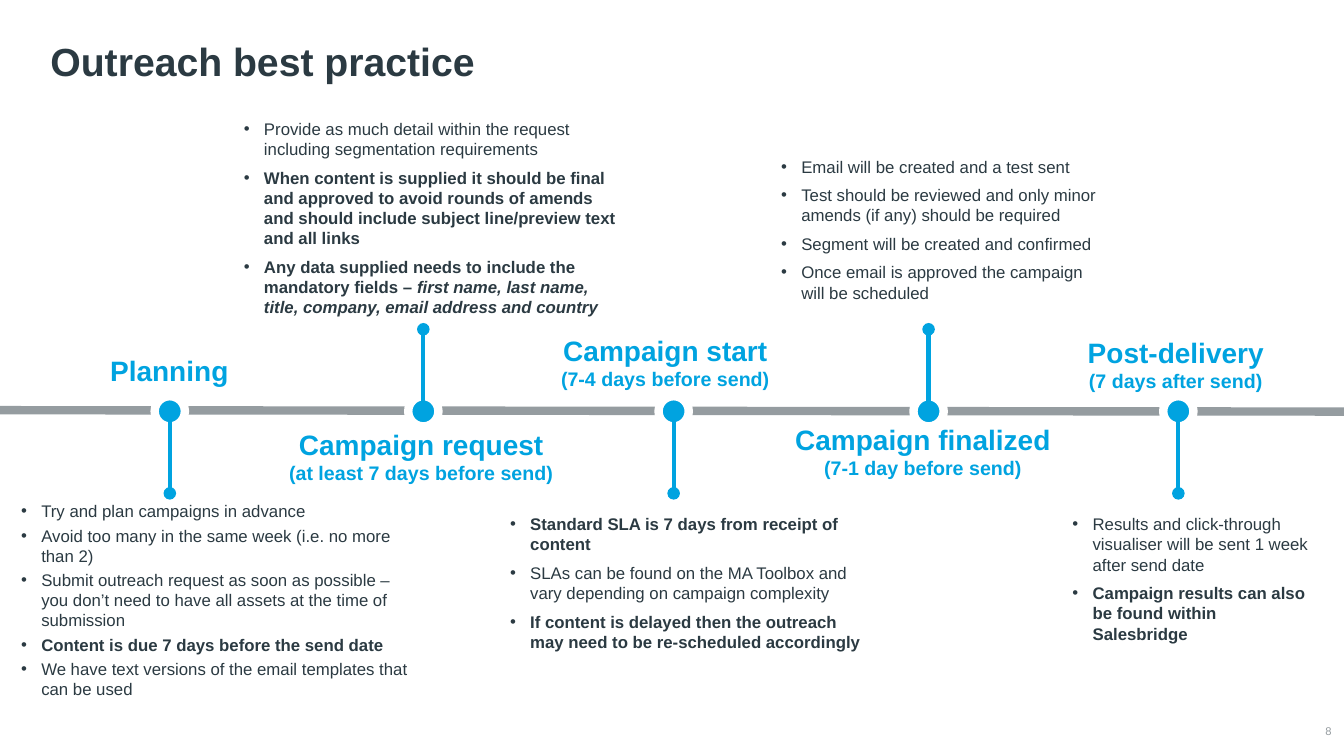
from dataclasses import dataclass

from lxml.etree import SubElement
from pptx import Presentation
from pptx.dml.color import RGBColor
from pptx.enum.shapes import MSO_CONNECTOR, MSO_SHAPE
from pptx.enum.text import MSO_ANCHOR, MSO_AUTO_SIZE, PP_ALIGN
from pptx.oxml.ns import qn
from pptx.util import Pt

COLOURS = {"ink": "2B3A42", "blue": "00A3E0", "grey": "959CA0", "white": "FFFFFF"}
FONT = "Arial"
AXIS_Y = 293.8
STEM = 58.6
DOT = 21.6
INDENT = 14.4


@dataclass
class Stage:
    """One stop on the timeline; boxes are left, top, width, height in points."""
    x: float
    direction: int  # -1: details above the axis, 1: below
    heading: tuple
    heading_box: tuple
    details: list  # paragraphs, each a list of (text, style) runs
    details_box: tuple
    gap: float = 6


STAGES = [
    Stage(121.3, 1, ("Planning",), (54.7, 249.1, 132.5, 31.7), [
        [("Try and plan campaigns in advance", "")],
        [("Avoid too many in the same week (i.e. no more than 2)", "")],
        [("Submit outreach request as soon as possible – you don’t need to have "
          "all assets at the time of submission", "")],
        [("Content is due 7 days before the send date", "b")],
        [("We have text versions of the email templates that can be used", "")],
    ], (15.1, 357.8, 276.5, 103), gap=3),
    Stage(302.4, -1, ("Campaign request", "(at least 7 days before send)"),
          (195.8, 301.7, 210.2, 48.2), [
        [("Provide as much detail within the request including segmentation "
          "requirements", "")],
        [("When content is supplied it should be final and approved to avoid "
          "rounds of amends and should include subject line/preview text and "
          "all links", "b")],
        [("Any data supplied needs to include the mandatory fields – ", "b"),
         ("first name, last name, title, company, email address and country", "bi")],
    ], (174.2, 85, 271.4, 139.7)),
    Stage(481.2, 1, ("Campaign start", "(7-4 days before send)"),
          (380.2, 234.7, 190.1, 48.2), [
        [("Standard SLA is 7 days from receipt of content", "b")],
        [("SLAs can be found on the MA Toolbox and vary depending on campaign "
          "complexity", "")],
        [("If content is delayed then the outreach may need to be re-scheduled "
          "accordingly", "b")],
    ], (364.3, 367.2, 260.6, 93.6)),
    Stage(663.3, -1, ("Campaign finalized", "(7-1 day before send)"),
          (556, 298.1, 206.6, 48.2), [
        [("Email will be created and a test sent", "")],
        [("Test should be reviewed and only minor amends (if any) should be "
          "required", "")],
        [("Segment will be created and confirmed", "")],
        [("Once email is approved the campaign will be scheduled", "")],
    ], (558, 111.6, 228.2, 115.9)),
    Stage(841.7, 1, ("Post-delivery", "(7 days after send)"),
          (756.7, 236.2, 166.3, 48.2), [
        [("Results and click-through visualiser will be sent 1 week after send "
          "date", "")],
        [("Campaign results can also be found within Salesbridge", "b")],
    ], (766.1, 367.2, 172.8, 93.6)),
]


def colour(name):
    return RGBColor.from_string(COLOURS[name])


def add_run(paragraph, text, size, ink, style=""):
    run = paragraph.add_run()
    run.text = text
    run.font.name = FONT
    run.font.size = Pt(size)
    run.font.color.rgb = colour(ink)
    run.font.bold = "b" in style
    run.font.italic = "i" in style


def add_frame(slide, box, inset=True):
    frame = slide.shapes.add_textbox(*map(Pt, box)).text_frame
    frame.word_wrap = True
    if not inset:
        frame.margin_left = frame.margin_right = Pt(0)
        frame.margin_top = frame.margin_bottom = Pt(0)
    return frame


def add_paragraph(frame, index):
    return frame.add_paragraph() if index else frame.paragraphs[0]


def add_line(slide, start, end, ink, width, round_head=False):
    line = slide.shapes.add_connector(
        MSO_CONNECTOR.STRAIGHT, *map(Pt, (*start, *end)))
    line.line.color.rgb = colour(ink)
    line.line.width = Pt(width)
    if round_head:
        SubElement(line.line._get_or_add_ln(), qn("a:headEnd"), type="oval")
    SubElement(line._element.spPr, qn("a:effectLst"))


def add_title(slide, text):
    title = slide.shapes.title
    title.left, title.top, title.width, title.height = map(
        Pt, (28.8, 20.9, 892.8, 43.2))
    frame = title.text_frame
    frame.auto_size = MSO_AUTO_SIZE.NONE
    frame.vertical_anchor = MSO_ANCHOR.BOTTOM
    paragraph = frame.paragraphs[0]
    paragraph.alignment = PP_ALIGN.LEFT
    paragraph.line_spacing = 0.9
    add_run(paragraph, text, 28, "ink", "b")


def add_page_number(slide, number):
    frame = add_frame(slide, (923, 515.5, 28.1, 13.7), inset=False)
    frame.vertical_anchor = MSO_ANCHOR.MIDDLE
    frame.paragraphs[0].alignment = PP_ALIGN.RIGHT
    add_run(frame.paragraphs[0], number, 8, "grey")


def add_heading(slide, stage):
    frame = add_frame(slide, stage.heading_box)
    frame.auto_size = MSO_AUTO_SIZE.SHAPE_TO_FIT_TEXT
    for index, (text, size) in enumerate(zip(stage.heading, (20, 14))):
        paragraph = add_paragraph(frame, index)
        paragraph.alignment = PP_ALIGN.CENTER
        add_run(paragraph, text, size, "blue", "b")


def add_details(slide, stage):
    frame = add_frame(slide, stage.details_box, inset=False)
    for index, runs in enumerate(stage.details):
        paragraph = add_paragraph(frame, index)
        properties = paragraph._p.get_or_add_pPr()
        properties.set("marL", str(Pt(INDENT)))
        properties.set("indent", str(-Pt(INDENT)))
        SubElement(properties, qn("a:buFont"), typeface=FONT)
        SubElement(properties, qn("a:buChar"), char="•")
        paragraph.space_after = Pt(stage.gap)
        for text, style in runs:
            add_run(paragraph, text, 12, "ink", style)


def add_marker(slide, stage):
    """Draw the ringed dot on the axis and the stem towards the details."""
    dot = slide.shapes.add_shape(
        MSO_SHAPE.OVAL, Pt(stage.x - DOT / 2), Pt(AXIS_Y - DOT / 2), Pt(DOT), Pt(DOT))
    dot.shadow.inherit = False
    dot.fill.solid()
    dot.fill.fore_color.rgb = colour("blue")
    dot.line.color.rgb = colour("white")
    dot.line.width = Pt(6)
    add_line(slide, (stage.x, AXIS_Y + stage.direction * STEM), (stage.x, AXIS_Y),
             "blue", 3, round_head=True)


def main():
    deck = Presentation()
    deck.slide_width, deck.slide_height = Pt(960), Pt(540)
    slide = deck.slides.add_slide(deck.slide_layouts.get_by_name("Title Only"))
    add_title(slide, "Outreach best practice")
    add_page_number(slide, "8")
    add_line(slide, (0, 293), (960, 294), "grey", 6)
    for stage in STAGES:
        add_heading(slide, stage)
        add_details(slide, stage)
        add_marker(slide, stage)
    deck.save("out.pptx")


if __name__ == "__main__":
    main()
